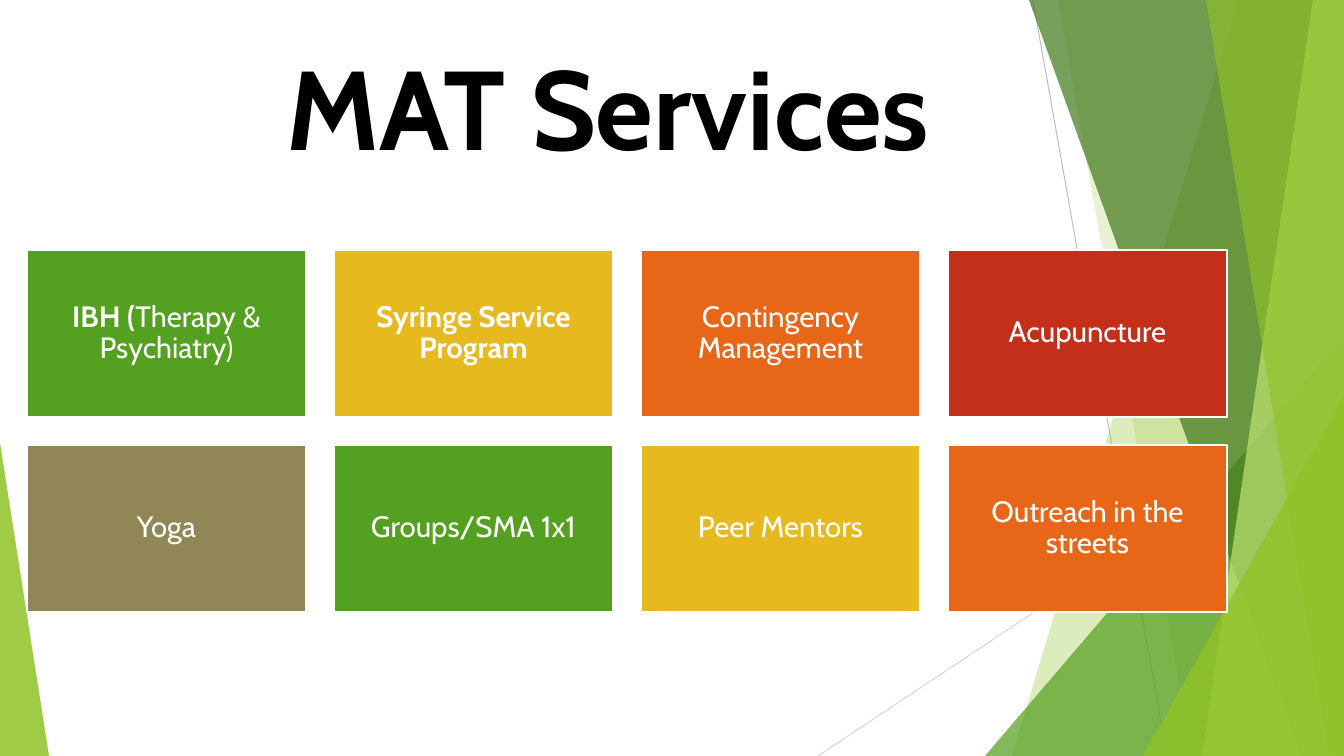
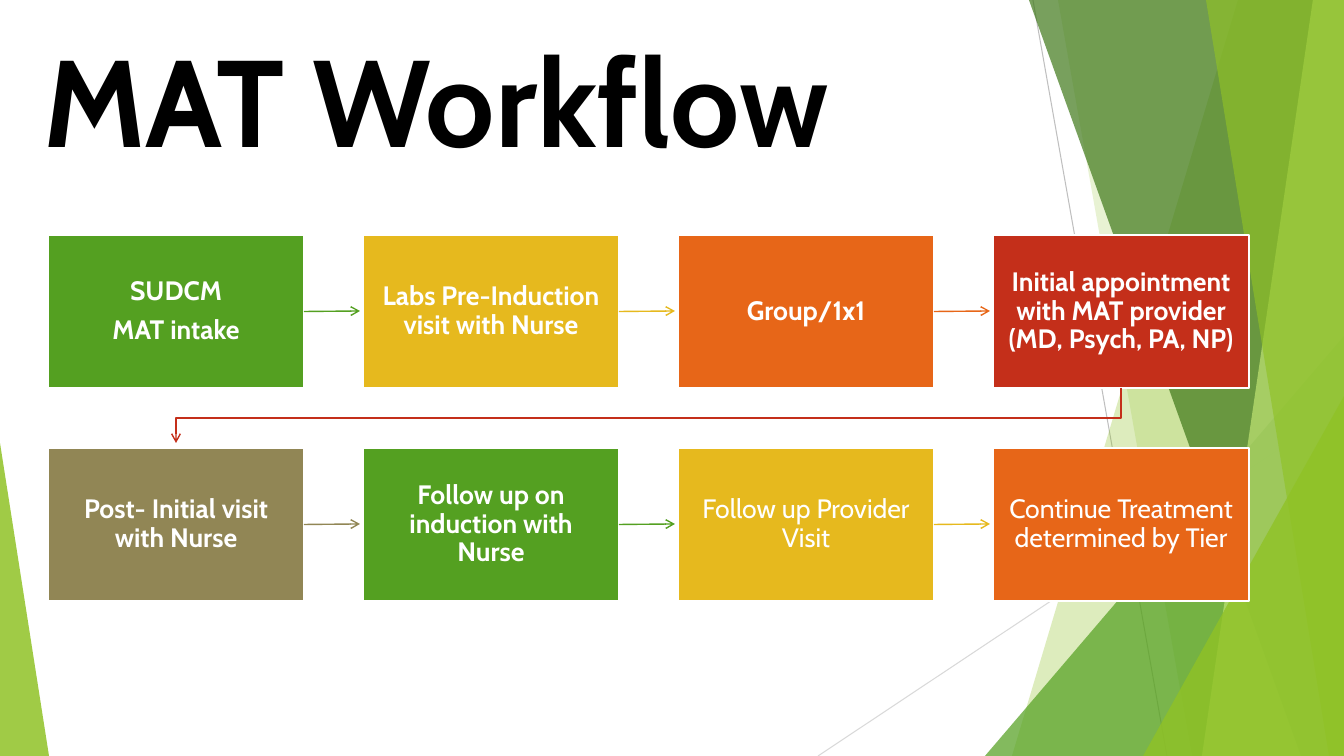
from itertools import cycle

from lxml import etree
from pptx import Presentation
from pptx.dml.color import RGBColor
from pptx.enum.shapes import MSO_CONNECTOR as CONN, MSO_SHAPE as SHAPE
from pptx.enum.text import MSO_ANCHOR as ANCHOR, MSO_AUTO_SIZE as AUTO, PP_ALIGN as ALIGN
from pptx.oxml.ns import qn
from pptx.util import Emu, Pt

WIDTH, HEIGHT = 1344, 756
EMU_PER_PX = 12192000 / WIDTH
COLUMNS = 4

BLACK = RGBColor(0x00, 0x00, 0x00)
WHITE = RGBColor(0xFF, 0xFF, 0xFF)
GRAY = RGBColor(0xBF, 0xBF, 0xBF)
LIGHT_GRAY = RGBColor(0xD9, 0xD9, 0xD9)
LIME = RGBColor(0x90, 0xC2, 0x26)
PALE_LIME = RGBColor(0xC0, 0xE4, 0x74)
DARK_GREEN = RGBColor(0x3F, 0x78, 0x19)
GREEN = RGBColor(0x54, 0xA0, 0x21)
YELLOW = RGBColor(0xE6, 0xB9, 0x1E)
ORANGE = RGBColor(0xE7, 0x66, 0x18)
RED = RGBColor(0xC4, 0x2F, 0x1A)
TAN = RGBColor(0x91, 0x86, 0x55)
ACCENTS = (GREEN, YELLOW, ORANGE, RED, TAN)

SERVICES = [
    ("IBH (", "Therapy & Psychiatry)"),
    ("Syringe Service Program", ""),
    ("", "Contingency Management"),
    ("", "Acupuncture"),
    ("", "Yoga"),
    ("", "Groups/SMA 1x1"),
    ("", "Peer Mentors"),
    ("", "Outreach in the streets"),
]
STEPS = [
    ("SUDCM\nMAT intake", ""),
    ("Labs Pre-Induction visit with Nurse", ""),
    ("Group/1x1", ""),
    ("Initial appointment with MAT provider (MD, Psych, PA, NP)", ""),
    ("Post- Initial visit with Nurse", ""),
    ("Follow up on induction with Nurse", ""),
    ("", "Follow up Provider Visit"),
    ("", "Continue Treatment determined by Tier"),
]


def px(n):
    return Emu(round(n * EMU_PER_PX))


class Deck:
    font = "Cabin"

    def __init__(self):
        self.prs = Presentation()
        self.prs.slide_width, self.prs.slide_height = px(WIDTH), px(HEIGHT)
        self.layout = self.prs.slide_layouts[5]
        self.slide = None

    def new_slide(self):
        self.slide = self.prs.slides.add_slide(self.layout)

    def style_font(self, font, size, color, bold):
        font.name, font.size, font.bold = self.font, Pt(size), bold
        font.color.rgb = color

    def title(self, text, x, y, w, h, size, align):
        sp = self.slide.shapes.title
        sp.left, sp.top, sp.width, sp.height = map(px, (x, y, w, h))
        tf = sp.text_frame
        tf.text = text
        tf.word_wrap, tf.auto_size = True, AUTO.NONE
        tf.vertical_anchor = ANCHOR.TOP
        p = tf.paragraphs[0]
        p.alignment = align
        self.style_font(p.runs[0].font, size, BLACK, True)

    def paint(self, sp, color, opacity=100):
        sp.shadow.inherit = False
        sp.fill.solid()
        sp.fill.fore_color.rgb = color
        sp.line.fill.background()
        if opacity < 100:
            rgb = sp.element.spPr.find(qn("a:solidFill")).find(qn("a:srgbClr"))
            etree.SubElement(rgb, qn("a:alpha"), val=str(opacity * 1000))

    def stroke(self, sp, color, width, arrow=False):
        sp.line.color.rgb, sp.line.width = color, Pt(width)
        if arrow:
            etree.SubElement(sp.get_or_add_ln(), qn("a:tailEnd"), type="arrow")

    def outline(self, points, closed):
        builder = self.slide.shapes.build_freeform(*points[0], scale=EMU_PER_PX)
        builder.add_line_segments(points[1:], close=closed)
        return builder.convert_to_shape()

    def band(self, top_x, bottom_x, color, opacity):
        points = [(top_x, 0), (WIDTH, 0), (WIDTH, HEIGHT), (bottom_x, HEIGHT)]
        self.paint(self.outline(points, True), color, opacity)

    def corner(self, x, y, w, apex, color, opacity):
        sp = self.slide.shapes.add_shape(
            SHAPE.ISOSCELES_TRIANGLE, px(x), px(y), px(w), px(HEIGHT - y))
        sp.adjustments[0] = apex
        self.paint(sp, color, opacity)

    def line(self, x1, y1, x2, y2, color, width, start=None):
        cx = self.slide.shapes.add_connector(
            CONN.STRAIGHT, px(x1), px(y1), px(x2), px(y2))
        if start is not None:
            cx.begin_connect(start, 3)
        self.stroke(cx, color, width, arrow=start is not None)
        etree.SubElement(cx.element.spPr, qn("a:effectLst"))

    def route(self, points, color):
        sp = self.outline(points, False)
        sp.shadow.inherit = False
        sp.fill.background()
        self.stroke(sp, color, 1, arrow=True)

    def backdrop(self):
        self.line(1033, 0, 1167, HEIGHT, GRAY, 0.75)
        self.line(WIDTH, 406, 818, HEIGHT, LIGHT_GRAY, 0.75)
        self.band(1238, 1012, LIME, 30)
        self.band(1058, 1192, LIME, 20)
        self.corner(985, 336, 359, 1, GREEN, 72)
        self.band(1029, 1301, DARK_GREEN, 70)
        self.band(1313, 1202, PALE_LIME, 70)
        self.band(1206, 1329, LIME, 65)
        self.corner(1143, 396, 201, 1, LIME, 80)
        self.corner(0, 443, 49, 0, LIME, 85)
        parts = [sp for sp in self.slide.shapes if not sp.is_placeholder]
        for i, sp in enumerate(parts):
            self.layout.shapes.element.insert(2 + i, sp.element)

    def card(self, x, y, w, h, bold, plain, color, size, inset):
        sp = self.slide.shapes.add_shape(SHAPE.RECTANGLE, px(x), px(y), px(w), px(h))
        self.paint(sp, color)
        self.stroke(sp, WHITE, 1.5)
        tf = sp.text_frame
        tf.word_wrap, tf.vertical_anchor = True, ANCHOR.MIDDLE
        tf.margin_left = tf.margin_right = px(inset)
        tf.margin_top = tf.margin_bottom = px(inset)
        tf.text = bold
        for i, p in enumerate(tf.paragraphs):
            p.alignment, p.line_spacing = ALIGN.CENTER, 0.9
            if i:
                p.space_before = Pt(7)
            for r in p.runs:
                self.style_font(r.font, size, WHITE, True)
        if plain:
            r = tf.paragraphs[-1].add_run()
            r.text = plain
            self.style_font(r.font, size, WHITE, False)
        return sp

    def cards(self, items, x, y, w, h, dx, dy, size, inset):
        placed = []
        for i, ((bold, plain), color) in enumerate(zip(items, cycle(ACCENTS))):
            row, col = divmod(i, COLUMNS)
            left, top = x + col * dx, y + row * dy
            sp = self.card(left, top, w, h, bold, plain, color, size, inset)
            placed.append((sp, left, top, color))
        return placed

    def flow(self, items, x, y, w, h, dx, dy, size, inset):
        placed = self.cards(items, x, y, w, h, dx, dy, size, inset)
        for (sp, left, top, color), (_, next_left, next_top, _) in zip(placed, placed[1:]):
            if top == next_top:
                mid = top + h // 2
                self.line(left + w, mid, next_left - 3, mid, color, 1, start=sp)
            else:
                start_x, end_x = left + w // 2, next_left + w // 2
                turn = (top + h + next_top) // 2
                self.route([(start_x, top + h), (start_x, turn),
                            (end_x, turn), (end_x, next_top - 5)], color)


def main():
    deck = Deck()
    deck.new_slide()
    deck.backdrop()
    deck.title("MAT Services", 72, 33, 1072, 165, 80, ALIGN.CENTER)
    deck.cards(SERVICES, 27, 250, 279, 167, 307, 195, size=21, inset=9)

    deck.new_slide()
    deck.title("MAT Workflow", 33, 19, 1232, 165, 88, ALIGN.LEFT)
    deck.flow(STEPS, 48, 235, 256, 153, 315, 213, size=19, inset=12)
    deck.prs.save("out.pptx")


if __name__ == "__main__":
    main()
